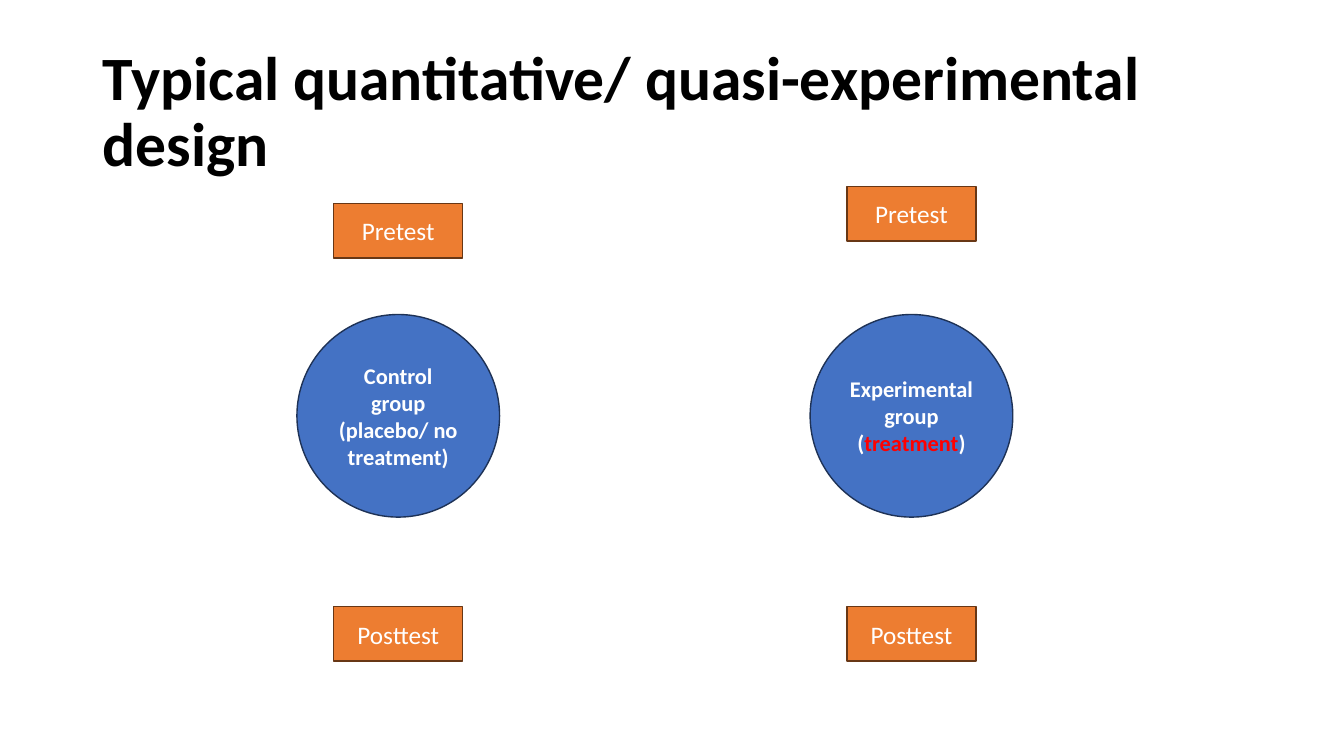
import pptx
import pptx.util
import pptx.dml.color
import pptx.enum.shapes
import pptx.enum.text
from dataclasses import dataclass

TITLE = "Typical quantitative/ quasi-experimental design"
GROUPS = [
    {"centre": 3.95, "pretest_top": 2.02,
     "label": [("Control group (placebo/ no treatment)", "light")]},
    {"centre": 9.04, "pretest_top": 1.85,
     "label": [("Experimental group (", "light"), ("treatment", "accent"), (")", "light")]},
]
WIDTH, HEIGHT = 13.33, 7.5
TITLE_BOX = (0.92, 0.4, 12.08, 1.45)
CIRCLE_TOP, CIRCLE_SIZE = 3.12, (2.01, 2.01)
POSTTEST_TOP, TEST_SIZE = 6.02, (1.28, 0.54)


@dataclass(frozen=True)
class Theme:
    font: str = "Calibri"
    title: str = "000000"
    light: str = "FFFFFF"
    accent: str = "FF0000"
    group: tuple = ("4472C4", "1E3256")
    test: tuple = ("ED7D31", "683715")
    title_size: int = 44
    group_size: int = 16
    test_size: int = 18


THEME = Theme()
SHAPES = pptx.enum.shapes.MSO_SHAPE
ALIGN = pptx.enum.text.PP_ALIGN


def rgb(value):
    return pptx.dml.color.RGBColor.from_string(value)


def write(sp, runs, size, bold, align):
    tf = sp.text_frame
    tf.word_wrap = True
    tf.auto_size = pptx.enum.text.MSO_AUTO_SIZE.NONE
    tf.vertical_anchor = pptx.enum.text.MSO_ANCHOR.MIDDLE
    p = tf.paragraphs[0]
    p.alignment = align
    p.font.name = THEME.font
    p.font.size = pptx.util.Pt(size)
    p.font.bold = bold
    for text, colour in runs:
        r = p.add_run()
        r.text = text
        r.font.color.rgb = rgb(getattr(THEME, colour))
    return p


def add_node(s, kind, centre, top, size, colours, runs, text_size, bold=False):
    width, height = size
    sp = s.shapes.add_shape(kind, *map(pptx.util.Inches, (centre - width / 2, top, width, height)))
    sp.shadow.inherit = False
    sp.fill.solid()
    sp.fill.fore_color.rgb = rgb(colours[0])
    sp.line.color.rgb = rgb(colours[1])
    sp.line.width = pptx.util.Pt(1)
    write(sp, runs, text_size, bold, ALIGN.CENTER)


def main():
    prs = pptx.Presentation()
    prs.slide_width = pptx.util.Inches(WIDTH)
    prs.slide_height = pptx.util.Inches(HEIGHT)
    s = prs.slides.add_slide(prs.slide_layouts[5])
    title = s.shapes.title
    title.left, title.top, title.width, title.height = map(pptx.util.Inches, TITLE_BOX)
    p = write(title, [(TITLE, "title")], THEME.title_size, True, ALIGN.LEFT)
    p.line_spacing = 0.9
    for group in GROUPS:
        centre = group["centre"]
        add_node(s, SHAPES.OVAL, centre, CIRCLE_TOP, CIRCLE_SIZE, THEME.group,
                 group["label"], THEME.group_size, True)
        for text, top in (("Pretest", group["pretest_top"]), ("Posttest", POSTTEST_TOP)):
            add_node(s, SHAPES.RECTANGLE, centre, top, TEST_SIZE, THEME.test,
                     [(text, "light")], THEME.test_size)
    prs.save("out.pptx")


if __name__ == "__main__":
    main()
